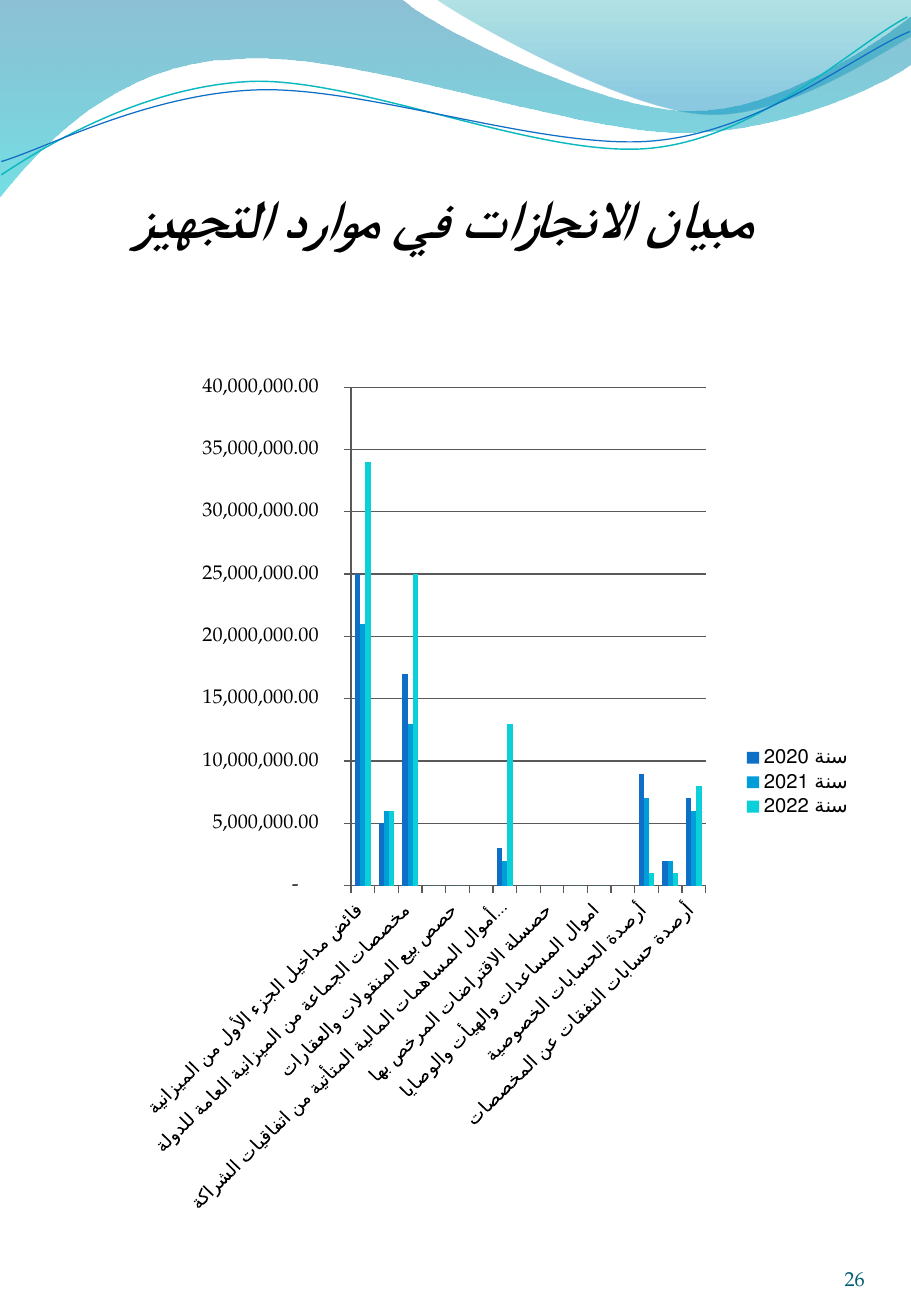
from dataclasses import dataclass

from lxml.etree import SubElement
from pptx import Presentation
from pptx.chart.chart import Chart
from pptx.chart.data import CategoryChartData
from pptx.dml.color import RGBColor
from pptx.enum.chart import XL_CHART_TYPE, XL_LEGEND_POSITION, XL_TICK_MARK
from pptx.enum.text import MSO_ANCHOR, MSO_AUTO_SIZE, PP_ALIGN
from pptx.oxml.ns import qn
from pptx.shapes.autoshape import Shape
from pptx.slide import Slide
from pptx.text.text import Font, TextFrame
from pptx.util import Emu, Pt

PX = 9144
CHART_WIDTH, CHART_HEIGHT = 603, 693
BODY_FONT = "TeX Gyre Pagella"
TITLE_FONT = "Calibri"
BLACK = RGBColor(0x00, 0x00, 0x00)
GREY = RGBColor(0x59, 0x59, 0x59)
NUMBER_TEAL = RGBColor(0x04, 0x5D, 0x75)
DEEP_BLUE = RGBColor(0x00, 0x74, 0xA1)
AQUA = RGBColor(0x00, 0xC6, 0xCF)
SEA_GREEN = RGBColor(0x00, 0xA1, 0xA9)
SKY = RGBColor(0x00, 0x8B, 0xBF)
LINE_TEAL = RGBColor(0x0A, 0xB8, 0xBF)
BLUE = RGBColor(0x0F, 0x6F, 0xC6)
BRIGHT_BLUE = RGBColor(0x00, 0x9D, 0xD9)
CYAN = RGBColor(0x0B, 0xD0, 0xD9)
NUMBER_FORMAT = (r'_-* #,##0.00\ _€_-;\-* #,##0.00\ _€_-;'
                 r'_-* "-"??\ _€_-;_-@_-')

Point = tuple[int, int]


@dataclass(frozen=True)
class Stop:
    position: float
    color: RGBColor
    opacity: int


@dataclass(frozen=True)
class Wave:
    start: Point
    segments: tuple[tuple[Point, ...], ...]
    stops: tuple[Stop, ...] = ()
    line: RGBColor | None = None
    width: float = 0


@dataclass(frozen=True)
class Year:
    name: str
    color: RGBColor
    millions: tuple[int, ...]


WAVES = (
    Wave((0, -1), (
        ((330, -1),),
        ((357, 24), (498, 91), (569, 91)),
        ((640, 91), (719, 37), (750, 13)),
        ((751, 52),),
        ((738, 63), (652, 109), (559, 109)),
        ((466, 108), (286, 40), (193, 49)),
        ((97, 51), (34, 120), (-1, 163)),
    ), stops=(Stop(0, DEEP_BLUE, 45), Stop(1, AQUA, 55))),
    Wave((359, -1), (
        ((382, 16), (511, 89), (577, 94)),
        ((642, 100), (721, 46), (750, 30)),
        ((750, 0),),
    ), stops=(Stop(0, SEA_GREEN, 30), Stop(0.8, SKY, 45))),
    Wave((1, 144), (
        ((37, 120), (118, 71), (207, 67)),
        ((296, 64), (446, 131), (536, 122)),
        ((626, 113), (703, 37), (747, 14)),
    ), line=LINE_TEAL, width=0.85),
    Wave((1, 133), (
        ((36, 123), (122, 77), (212, 74)),
        ((302, 71), (449, 124), (538, 116)),
        ((628, 108), (705, 44), (749, 26)),
    ), line=BLUE, width=0.75),
)

RESOURCES = (
    "فائض مداخيل الجزء الأول من الميزانية ",
    "فوائض مداخيل السنوات المالية السابقة ",
    "مخصصات الجماعة من الميزانية العامة للدولة ",
    "حصسلة الاستغلالات والاتاوي وخصص الارباح",
    "حصص بيع المنقولات والعقارات ",
    "امدادات التجهيز الممنوحة من قبل الدولة أو الاشخاص الاعتبارية الخاضعة للقانون العام",
    "أموال المساهمات المالية المتأتية من اتفاقيات الشراكة والتعاون ",
    "أموال المساهمات المالية المتأتية من االمؤسسات والمقاولات التابعة للجماعة أو المساهمة فيها ",
    "حصسلة الاقتراضات المرخص بها ",
    "",
    "اموال المساعدات والهيأت والوصايا ",
    "مداخيل التجهيز المختلفة والموارد الأخرى المقررة في القوانين والانظمة الجاري بها العمل ",
    "أرصدة الحسابات الخصوصية ",
    "ارصدة الحسابات المرصدة لأمور خصوصية ",
    "أرصدة حسابات النفقات عن المخصصات ",
)

YEARS = (
    Year("سنة 2020", BLUE, (25, 5, 17, 0, 0, 0, 3, 0, 0, 0, 0, 0, 9, 2, 7)),
    Year("سنة 2021", BRIGHT_BLUE, (21, 6, 13, 0, 0, 0, 2, 0, 0, 0, 0, 0, 7, 2, 6)),
    Year("سنة 2022", CYAN, (34, 6, 25, 0, 0, 0, 13, 0, 0, 0, 0, 0, 1, 1, 8)),
)


def px(*lengths: int) -> list[Emu]:
    return [Emu(length * PX) for length in lengths]


def bend_segments(shape: Shape, wave: Wave) -> None:
    lines = list(shape._element.iter(qn("a:lnTo")))
    for segment in wave.segments:
        group, lines = lines[:len(segment)], lines[len(segment):]
        if len(group) == 3:
            first, *others = group
            curve = SubElement(first.getparent(), qn("a:cubicBezTo"))
            first.addprevious(curve)
            for line in group:
                curve.append(line[0])
                line.getparent().remove(line)


def fill_gradient(shape: Shape, stops: tuple[Stop, ...]) -> None:
    shape.fill.gradient()
    shape.fill.gradient_angle = 270
    for target, stop in zip(shape.fill.gradient_stops, stops):
        target.position = stop.position
        target.color.rgb = stop.color
    for color, stop in zip(shape._element.spPr.iter(qn("a:srgbClr")), stops):
        SubElement(color, qn("a:alpha"), val=str(stop.opacity * 1000))


def draw_wave(page: Slide, wave: Wave) -> None:
    builder = page.shapes.build_freeform(*px(*wave.start))
    points = [px(*point) for segment in wave.segments for point in segment]
    builder.add_line_segments(points, close=bool(wave.stops))
    shape = builder.convert_to_shape()
    bend_segments(shape, wave)
    shape.shadow.inherit = False
    if wave.stops:
        fill_gradient(shape, wave.stops)
        shape.line.fill.background()
    else:
        shape.fill.background()
        shape.line.color.rgb = wave.line
        shape.line.width = Pt(wave.width)


def style_font(font: Font, size: float, color: RGBColor, name: str = BODY_FONT) -> None:
    font.size = Pt(size)
    font.color.rgb = color
    font.name = name


def write_text(frame: TextFrame, text: str, align: PP_ALIGN, top_inset: int = 0) -> Font:
    frame.text = text
    frame.word_wrap = True
    frame.auto_size = MSO_AUTO_SIZE.NONE
    frame.vertical_anchor = MSO_ANCHOR.BOTTOM
    frame.margin_left = frame.margin_right = frame.margin_bottom = 0
    frame.margin_top = px(top_inset)[0]
    para = frame.paragraphs[0]
    para.alignment = align
    return para.font


def place_plot(chart: Chart, left: int, top: int, width: int, height: int) -> None:
    area = chart._chartSpace.chart.plotArea
    for old in area.findall(qn("c:layout")):
        area.remove(old)
    layout = SubElement(area, qn("c:layout"))
    area.insert(0, layout)
    manual = SubElement(layout, qn("c:manualLayout"))
    settings = {"layoutTarget": "inner", "xMode": "edge", "yMode": "edge",
                "x": left / CHART_WIDTH, "y": top / CHART_HEIGHT,
                "w": width / CHART_WIDTH, "h": height / CHART_HEIGHT}
    for name, value in settings.items():
        SubElement(manual, qn(f"c:{name}"), val=str(value))


def draw_chart(page: Slide) -> None:
    data = CategoryChartData()
    data.categories = RESOURCES
    for year in YEARS:
        data.add_series(year.name, [value * 1_000_000 for value in year.millions])
    chart = page.shapes.add_chart(XL_CHART_TYPE.COLUMN_CLUSTERED,
                                  *px(109, 306, CHART_WIDTH, CHART_HEIGHT), data).chart
    chart.has_title = False
    style_font(chart.font, 18, BLACK)
    place_plot(chart, 180, 13, 292, 421)

    plot = chart.plots[0]
    plot.vary_by_categories = False
    plot.gap_width = 150
    for series, year in zip(plot.series, YEARS):
        series.format.fill.solid()
        series.format.fill.fore_color.rgb = year.color

    for axis, size in ((chart.category_axis, 11), (chart.value_axis, 12)):
        axis.major_tick_mark = XL_TICK_MARK.OUTSIDE
        axis.format.line.color.rgb = GREY
        style_font(axis.tick_labels.font, size, BLACK)
    chart.category_axis._element.txPr.find(qn("a:bodyPr")).set("rot", "-2700000")

    values = chart.value_axis
    values.minimum_scale, values.maximum_scale = 0, 40_000_000
    values.major_unit = 5_000_000
    values.major_gridlines.format.line.color.rgb = GREY
    values.tick_labels.number_format = NUMBER_FORMAT
    values.tick_labels.number_format_is_linked = False

    chart.has_legend = True
    chart.legend.position = XL_LEGEND_POSITION.RIGHT
    chart.legend.include_in_layout = False
    style_font(chart.legend.font, 12, BLACK)


def main() -> None:
    deck = Presentation()
    deck.slide_width, deck.slide_height = px(750, 1083)
    page = deck.slides.add_slide(deck.slide_layouts[5])
    for wave in WAVES:
        draw_wave(page, wave)

    title = page.shapes.title
    page.shapes._spTree.append(title._element)
    title.left, title.top, title.width, title.height = px(38, 135, 675, 70)
    font = write_text(title.text_frame, "مبيان الانجازات في موارد التجهيز  ",
                      PP_ALIGN.CENTER, top_inset=5)
    style_font(font, 32, BLACK, TITLE_FONT)
    font.bold = font.italic = True
    SubElement(font._element, qn("a:cs"), typeface=TITLE_FONT)

    draw_chart(page)
    number = page.shapes.add_textbox(*px(650, 1004, 62, 58))
    style_font(write_text(number.text_frame, "26", PP_ALIGN.RIGHT), 12, NUMBER_TEAL)
    deck.save("out.pptx")


if __name__ == "__main__":
    main()
